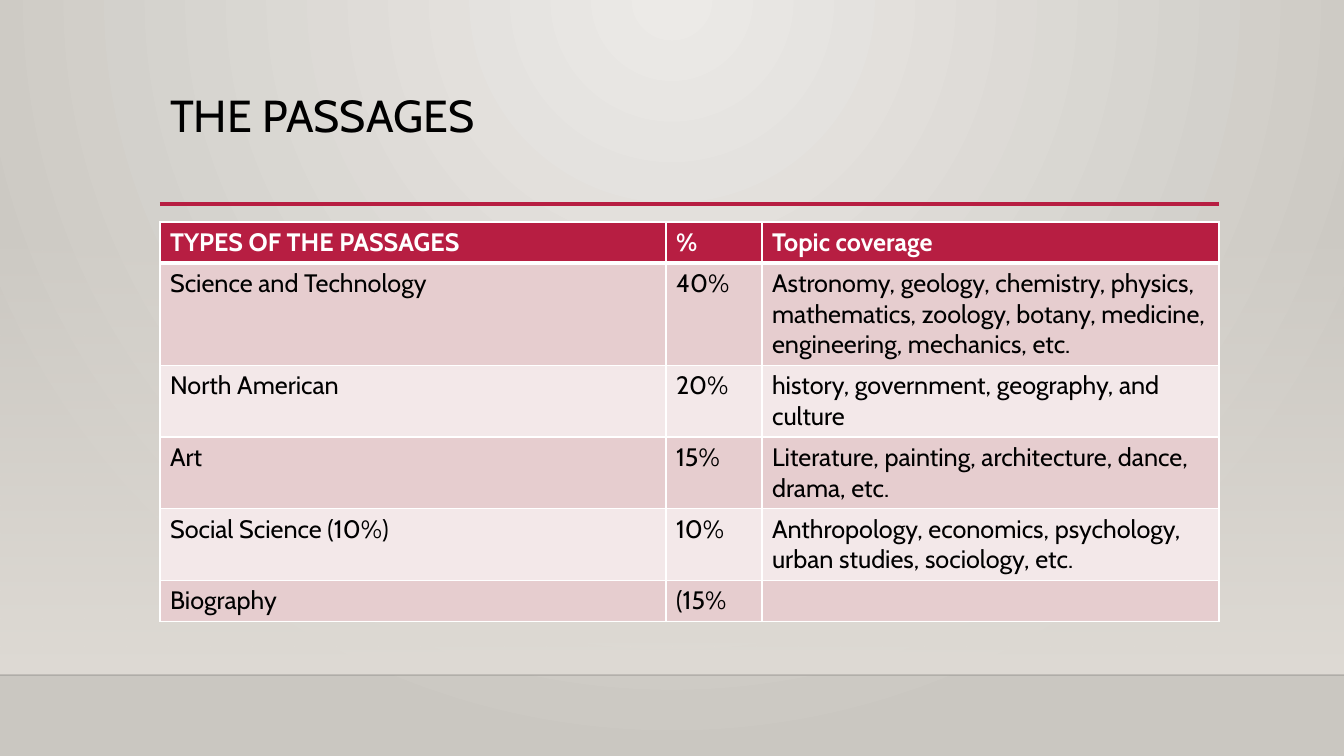
from lxml import etree
from pptx import Presentation
from pptx.dml.color import RGBColor
from pptx.enum.shapes import MSO_CONNECTOR, MSO_SHAPE
from pptx.enum.text import MSO_ANCHOR, MSO_AUTO_SIZE, PP_ALIGN
from pptx.oxml import parse_xml
from pptx.oxml.ns import nsdecls, qn
from pptx.util import Pt

TITLE = "THE PASSAGES"
ROWS = [
    ("TYPES OF THE PASSAGES", "%", "Topic coverage"),
    ("Science and Technology", "40%",
     "Astronomy, geology, chemistry, physics, mathematics, zoology, botany, "
     "medicine, engineering, mechanics, etc."),
    ("North American", "20%", "history, government, geography, and culture"),
    ("Art", "15%", "Literature, painting, architecture, dance, drama, etc."),
    ("Social Science (10%)", "10%",
     "Anthropology, economics, psychology, urban studies, sociology, etc."),
    ("Biography", "(15%", ""),
]

FONT = "Cabin"
BLACK = RGBColor(0x00, 0x00, 0x00)
WHITE = RGBColor(0xFF, 0xFF, 0xFF)
CRIMSON = RGBColor(0xB7, 0x1E, 0x42)
BAND_DARK = RGBColor(0xE6, 0xCD, 0xCF)
BAND_LIGHT = RGBColor(0xF3, 0xE8, 0xE9)
GLOW = RGBColor(0xEC, 0xEA, 0xE7)
STONE = RGBColor(0xCA, 0xC7, 0xC1)
SAND = RGBColor(0xDF, 0xDB, 0xD5)

TOP = MSO_ANCHOR.TOP
LEFT = PP_ALIGN.LEFT
NO_AUTOFIT = MSO_AUTO_SIZE.NONE
STRAIGHT = MSO_CONNECTOR.STRAIGHT
RECTANGLE = MSO_SHAPE.RECTANGLE

SLIDE_WIDTH, SLIDE_HEIGHT = 1344, 756
CONTENT_LEFT, RULE_RIGHT, RULE_Y = 160, 1219, 204
TITLE_TOP, TITLE_WIDTH, TITLE_HEIGHT = 89, 1059, 115
TABLE_TOP, ROW_HEIGHT = 222, 41
COLUMN_WIDTHS = [506, 96, 457]
WALL_TOP, FLOOR_Y = 223, 675


def px(length):
    return round(length * 914400 / 100.8)


def gradient(stops, direction):
    stop_xml = "".join(
        f'<a:gs pos="{position * 1000}"><a:srgbClr val="{color}">'
        f'<a:alpha val="{alpha * 1000}"/></a:srgbClr></a:gs>'
        for position, color, alpha in stops)
    return parse_xml(f'<a:gradFill {nsdecls("a")} rotWithShape="1">'
                     f'<a:gsLst>{stop_xml}</a:gsLst>{direction}</a:gradFill>')


def set_gradient(fill, element, stops, direction):
    fill.gradient()
    old = next(element.iter(qn("a:gradFill")))
    old.getparent().replace(old, gradient(stops, direction))


def add_line(slide, left, right, y, color, width, opacity=100):
    line = slide.shapes.add_connector(STRAIGHT, px(left), px(y), px(right), px(y))
    line.line.color.rgb = color
    line.line.width = Pt(width)
    color_element = next(line._element.spPr.iter(qn("a:srgbClr")))
    etree.SubElement(color_element, qn("a:alpha"), val=str(opacity * 1000))
    etree.SubElement(line._element.spPr, qn("a:effectLst"))


def write(text_frame, text, size=18, color=BLACK, bold=False, spacing=None):
    paragraph = text_frame.paragraphs[0]
    paragraph.alignment = LEFT
    paragraph.line_spacing = spacing
    paragraph.font.size = Pt(size)
    if text:
        run = paragraph.add_run()
        run.text = text
        run.font.name = FONT
        run.font.size = Pt(size)
        run.font.bold = bold
        run.font.color.rgb = color


def set_borders(cell, bottom):
    properties = cell._tc.get_or_add_tcPr()
    for index, (side, width) in enumerate([("L", 1), ("R", 1), ("T", 1), ("B", bottom)]):
        properties.insert(index, parse_xml(
            f'<a:ln{side} {nsdecls("a")} w="{Pt(width)}"><a:solidFill>'
            f'<a:srgbClr val="{WHITE}"/></a:solidFill></a:ln{side}>'))


def add_backdrop(slide):
    set_gradient(slide.background.fill, slide._element,
                 [(0, GLOW, 100), (100, STONE, 100)],
                 '<a:path path="circle"><a:fillToRect l="43000" t="0" '
                 'r="43000" b="100000"/></a:path>')
    wall = slide.shapes.add_shape(RECTANGLE, 0, px(WALL_TOP), px(SLIDE_WIDTH),
                                  px(FLOOR_Y - WALL_TOP))
    wall.shadow.inherit = False
    wall.line.fill.background()
    set_gradient(wall.fill, wall._element, [(0, SAND, 0), (100, SAND, 100)],
                 '<a:lin ang="5400000" scaled="0"/>')
    add_line(slide, 0, SLIDE_WIDTH, FLOOR_Y, BLACK, 1, opacity=20)
    add_line(slide, CONTENT_LEFT, RULE_RIGHT, RULE_Y, CRIMSON, 2.5)


def add_title(slide):
    title = slide.shapes.title
    title.left, title.top = px(CONTENT_LEFT), px(TITLE_TOP)
    title.width, title.height = px(TITLE_WIDTH), px(TITLE_HEIGHT)
    title.text_frame.vertical_anchor = TOP
    title.text_frame.auto_size = NO_AUTOFIT
    write(title.text_frame, TITLE, size=32, spacing=0.9)


def add_passage_table(slide):
    table = slide.shapes.add_table(
        len(ROWS), len(COLUMN_WIDTHS), px(CONTENT_LEFT), px(TABLE_TOP),
        px(sum(COLUMN_WIDTHS)), px(ROW_HEIGHT * len(ROWS))).table
    for column, width in zip(table.columns, COLUMN_WIDTHS):
        column.width = px(width)
    for row_index, texts in enumerate(ROWS):
        header = row_index == 0
        band = BAND_DARK if row_index % 2 else BAND_LIGHT
        table.rows[row_index].height = px(ROW_HEIGHT)
        for column_index, text in enumerate(texts):
            cell = table.cell(row_index, column_index)
            cell.fill.solid()
            cell.fill.fore_color.rgb = CRIMSON if header else band
            set_borders(cell, bottom=3 if header else 1)
            write(cell.text_frame, text, color=WHITE if header else BLACK, bold=header)


def main():
    presentation = Presentation()
    presentation.slide_width = px(SLIDE_WIDTH)
    presentation.slide_height = px(SLIDE_HEIGHT)
    slide = presentation.slides.add_slide(presentation.slide_layouts[5])
    add_backdrop(slide)
    add_title(slide)
    add_passage_table(slide)
    presentation.save("out.pptx")


if __name__ == "__main__":
    main()
